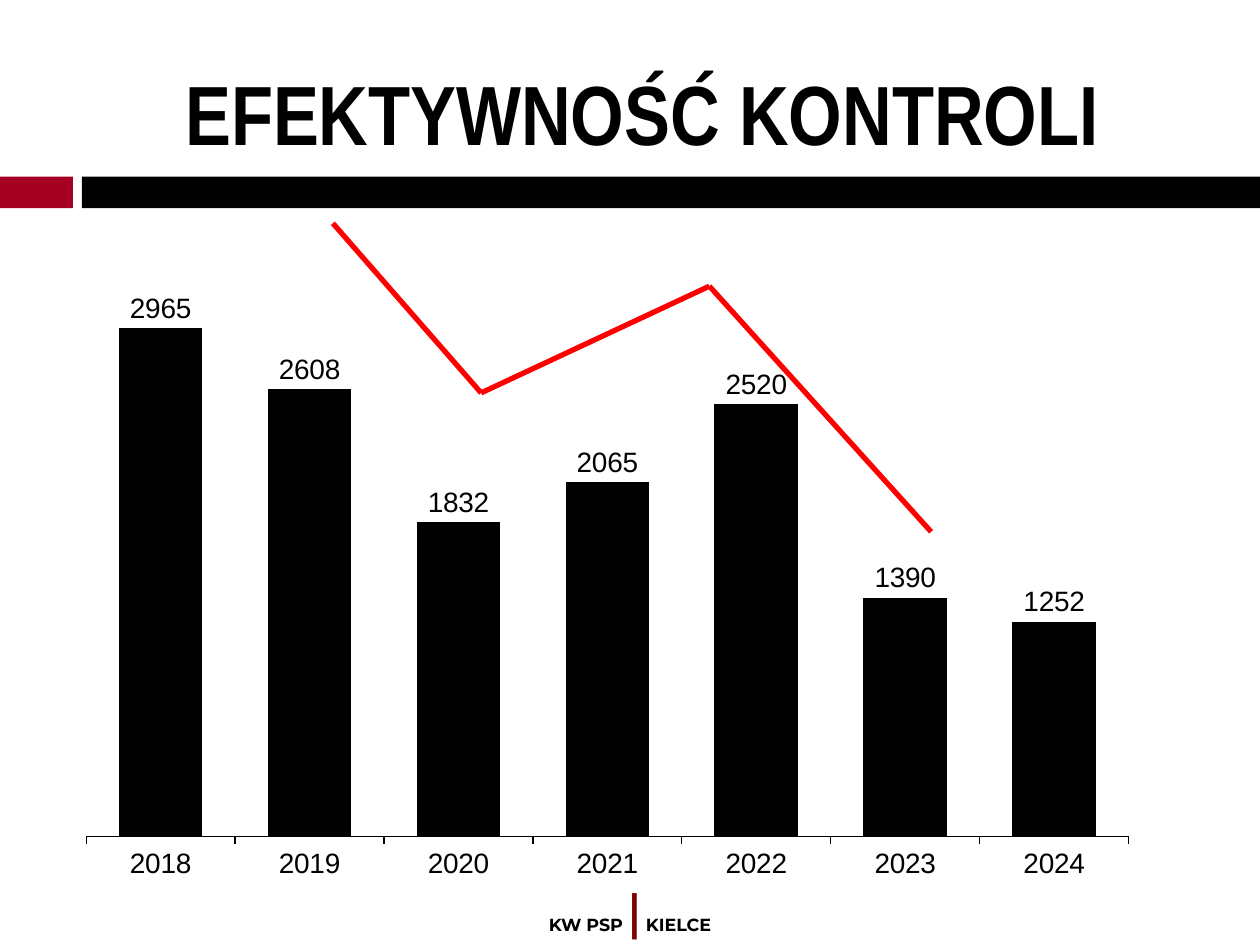
from itertools import pairwise

from lxml.etree import SubElement
from pptx import Presentation
from pptx.chart.data import CategoryChartData
from pptx.dml.color import RGBColor
from pptx.enum.chart import XL_CHART_TYPE as Chart, XL_LABEL_POSITION as LabelPos, XL_TICK_MARK as Tick
from pptx.enum.shapes import MSO_CONNECTOR as Connector, MSO_SHAPE as Shape
from pptx.enum.text import MSO_ANCHOR as Anchor, MSO_AUTO_SIZE as AutoSize, PP_ALIGN as Align
from pptx.oxml.ns import qn
from pptx.util import Cm, Pt

BLACK = RGBColor(0x00, 0x00, 0x00)
CRIMSON = RGBColor(0xA5, 0x00, 0x21)
MAROON = RGBColor(0x80, 0x00, 0x00)
DARK_RED = RGBColor(0x99, 0x00, 0x00)
RED = RGBColor(0xFF, 0x00, 0x00)

INSPECTIONS = {
    "2018": 2965, "2019": 2608, "2020": 1832, "2021": 2065,
    "2022": 2520, "2023": 1390, "2024": 1252,
}
TREND = [(6.71, 4.5), (9.7, 7.92), (14.3, 5.77), (18.77, 10.72)]
FOOTER = [
    ("KW PSP", "Montserrat", 10, BLACK),
    (" ", "Lato", 12, BLACK),
    ("|", "Lato", 28, MAROON),
    (" ", "Lato", 12, DARK_RED),
    ("KIELCE", "Montserrat", 10, BLACK),
]


class SlideBuilder:
    title_font = "Arial Narrow"
    chart_font = "Arial"

    def __init__(self, s):
        self.s = s

    def style(self, font, name, size, color=BLACK, bold=False):
        font.name, font.size, font.bold = name, Pt(size), bold
        font.color.rgb = color

    def place(self, sp, box):
        sp.left, sp.top, sp.width, sp.height = (Cm(v) for v in box)

    def title(self, text, box):
        sp = self.s.shapes.title
        self.place(sp, box)
        tf = sp.text_frame
        tf.text = text
        tf.auto_size = AutoSize.NONE
        tf.word_wrap = True
        tf.vertical_anchor = Anchor.TOP
        tf.margin_top, tf.margin_right = Cm(0.12), 0
        p = tf.paragraphs[0]
        p.alignment = Align.LEFT
        self.style(p.runs[0].font, self.title_font, 48, bold=True)

    def bar(self, box, color):
        sp = self.s.shapes.add_shape(Shape.RECTANGLE, *(Cm(v) for v in box))
        sp.shadow.inherit = False
        sp.fill.solid()
        sp.fill.fore_color.rgb = color
        sp.line.fill.background()

    def line_of_text(self, parts, box):
        sp = self.s.shapes.add_textbox(*(Cm(v) for v in box))
        tf = sp.text_frame
        tf.word_wrap = True
        tf.vertical_anchor = Anchor.MIDDLE
        p = tf.paragraphs[0]
        p.alignment = Align.CENTER
        for text, name, size, color in parts:
            r = p.add_run()
            r.text = text
            self.style(r.font, name, size, color, bold=True)

    def polyline(self, points, color, width):
        for start, end in pairwise(points):
            line = self.s.shapes.add_connector(
                Connector.STRAIGHT, *(Cm(v) for v in start + end))
            line.line.color.rgb = color
            line.line.width = Pt(width)
            SubElement(line._element.spPr, qn("a:effectLst"))

    def column_chart(self, values, box):
        data = CategoryChartData()
        data.categories = list(values)
        data.add_series("Series 1", list(values.values()))
        chart = self.s.shapes.add_chart(
            Chart.COLUMN_CLUSTERED, *(Cm(v) for v in box), data).chart
        chart.has_legend = chart.has_title = False
        self.style(chart.font, self.chart_font, 16)

        axis = chart.category_axis
        axis.major_tick_mark = Tick.OUTSIDE
        axis.format.line.color.rgb = BLACK
        axis.format.line.width = Pt(0.75)
        self.style(axis.tick_labels.font, self.chart_font, 16)
        scale = chart.value_axis
        scale.minimum_scale, scale.maximum_scale = 0, 3500
        scale.has_major_gridlines = scale.visible = False

        plot = chart.plots[0]
        plot.gap_width = 78
        plot.vary_by_categories = False
        plot.has_data_labels = True
        labels = plot.data_labels
        labels.show_value = True
        labels.position = LabelPos.OUTSIDE_END
        self.style(labels.font, self.chart_font, 16)
        fill = plot.series[0].format.fill
        fill.solid()
        fill.fore_color.rgb = BLACK
        self.plot_layout(chart, x=0.02, y=0.02, w=0.96, h=0.9)

    def plot_layout(self, chart, **sizes):
        area = chart._chartSpace.chart.plotArea
        for old in area.findall(qn("c:layout")):
            area.remove(old)
        layout = SubElement(area, qn("c:layout"))
        area.insert(0, layout)
        manual = SubElement(layout, qn("c:manualLayout"))
        settings = {"layoutTarget": "inner", "xMode": "edge", "yMode": "edge", **sizes}
        for tag, value in settings.items():
            SubElement(manual, qn(f"c:{tag}")).set("val", str(value))


def main():
    prs = Presentation()
    prs.slide_width, prs.slide_height = Cm(25.4), Cm(19.05)
    slide = SlideBuilder(prs.slides.add_slide(prs.slide_layouts[5]))
    slide.bar((0, 3.56, 1.47, 0.64), CRIMSON)
    slide.bar((1.65, 3.56, 23.75, 0.64), BLACK)
    slide.column_chart(INSPECTIONS, (1.3, 4.5, 21.89, 13.44))
    slide.title("EFEKTYWNOŚĆ KONTROLI", (3.48, 1.12, 19.2, 1.55))
    slide.line_of_text(FOOTER, (0, 18.03, 25.4, 0.71))
    slide.polyline(TREND, RED, 3)
    prs.save("out.pptx")


if __name__ == "__main__":
    main()
